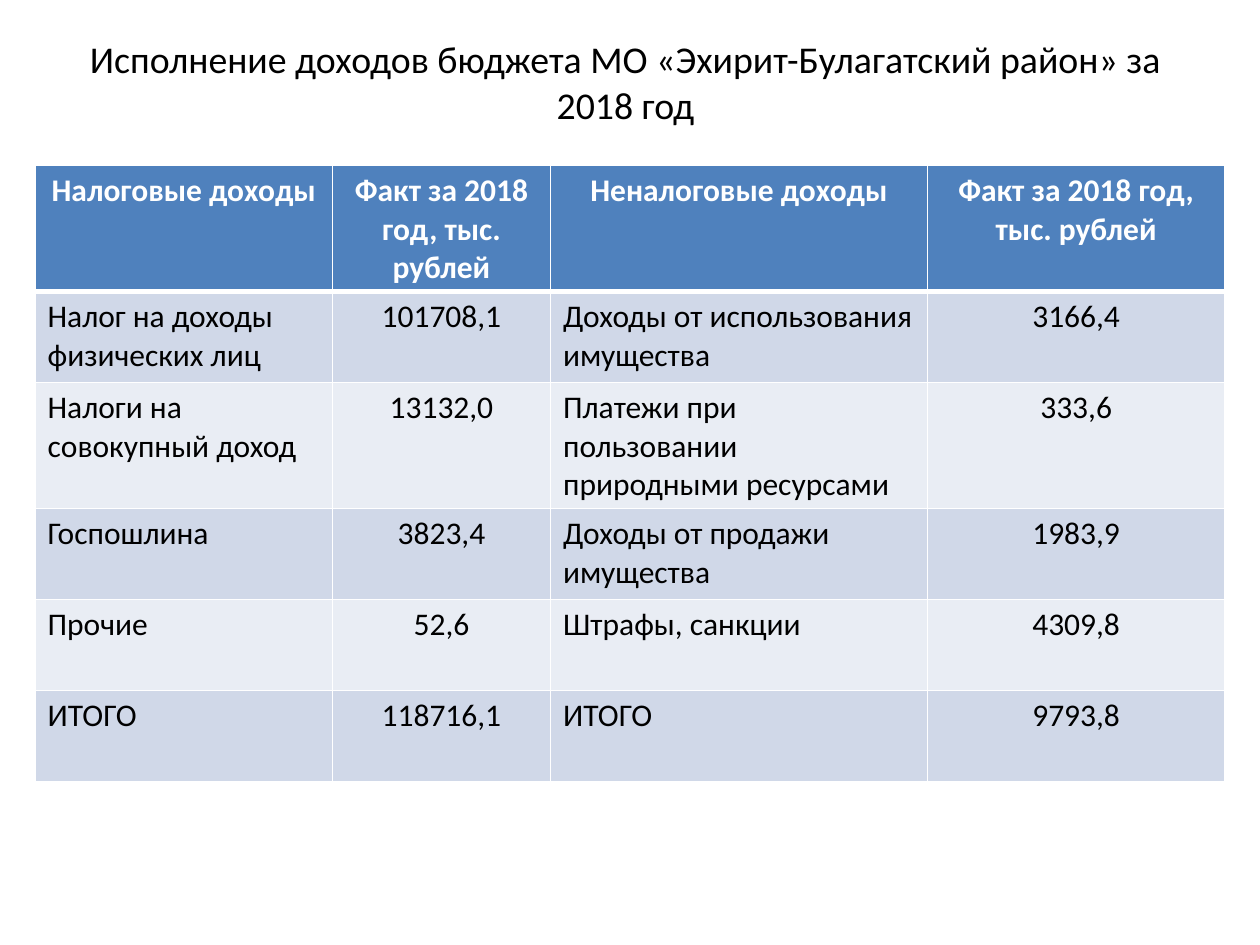
from dataclasses import dataclass

from lxml import etree
from pptx import Presentation
from pptx.dml.color import RGBColor
from pptx.enum.text import MSO_ANCHOR, PP_ALIGN
from pptx.oxml.ns import qn
from pptx.slide import Slide
from pptx.table import _Cell
from pptx.text.text import _Paragraph
from pptx.util import Pt

LEFT, CENTER = PP_ALIGN.LEFT, PP_ALIGN.CENTER
MIDDLE = MSO_ANCHOR.MIDDLE

BLACK = RGBColor(0x00, 0x00, 0x00)
WHITE = RGBColor(0xFF, 0xFF, 0xFF)
HEADER_BLUE = RGBColor(0x4F, 0x81, 0xBD)
BAND_DARK = RGBColor(0xD0, 0xD8, 0xE8)
BAND_LIGHT = RGBColor(0xE9, 0xED, 0xF4)

FONT = "Calibri"
THIN, THICK = Pt(1), Pt(3)
TITLE = "Исполнение доходов бюджета МО «Эхирит-Булагатский район» за 2018 год"


@dataclass(frozen=True)
class Column:
    heading: str
    width: float
    alignment: PP_ALIGN
    values: tuple[str, ...]


COLUMNS = (
    Column("Налоговые доходы", 170, LEFT,
           ("Налог на доходы физических лиц", "Налоги на совокупный доход",
            "Госпошлина", "Прочие", "ИТОГО")),
    Column("Факт за 2018 год, тыс. рублей", 124.6, CENTER,
           ("101708,1", "13132,0", "3823,4", "52,6", "118716,1")),
    Column("Неналоговые доходы", 215.4, LEFT,
           ("Доходы от использования имущества",
            "Платежи при пользовании природными ресурсами",
            "Доходы от продажи имущества", "Штрафы, санкции", "ИТОГО")),
    Column("Факт за 2018 год, тыс. рублей", 170, CENTER,
           ("3166,4", "333,6", "1983,9", "4309,8", "9793,8")),
)
HEADER_HEIGHT, ROW_HEIGHT = 53.3, 52


def write_text(paragraph: _Paragraph, text: str, alignment: PP_ALIGN,
               size: float, color: RGBColor, bold: bool = False) -> None:
    paragraph.alignment = alignment
    run = paragraph.add_run()
    run.text = text
    for name, value in {"name": FONT, "size": Pt(size), "bold": bold}.items():
        setattr(run.font, name, value)
    run.font.color.rgb = color


def set_borders(cell: _Cell, top: int, bottom: int) -> None:
    properties = cell._tc.get_or_add_tcPr()
    widths = {"a:lnL": THIN, "a:lnR": THIN, "a:lnT": top, "a:lnB": bottom}
    for tag, width in widths.items():
        line = etree.SubElement(properties, qn(tag), w=str(width))
        fill = etree.SubElement(line, qn("a:solidFill"))
        etree.SubElement(fill, qn("a:srgbClr"), val=str(WHITE))


def add_title(slide: Slide) -> None:
    box = slide.shapes.add_textbox(Pt(31), Pt(21.6), Pt(653), Pt(49.7))
    frame = box.text_frame
    for name, value in {"word_wrap": True, "vertical_anchor": MIDDLE}.items():
        setattr(frame, name, value)
    write_text(frame.paragraphs[0], TITLE, CENTER, 21.6, BLACK)


def add_income_table(slide: Slide) -> None:
    row_count = 1 + len(COLUMNS[0].values)
    width = sum(column.width for column in COLUMNS)
    height = HEADER_HEIGHT + ROW_HEIGHT * (row_count - 1)
    table = slide.shapes.add_table(row_count, len(COLUMNS), Pt(20), Pt(94.5),
                                   Pt(width), Pt(height)).table
    for index, row in enumerate(table.rows):
        row.height = Pt(ROW_HEIGHT if index else HEADER_HEIGHT)

    for column_index, column in enumerate(COLUMNS):
        table.columns[column_index].width = Pt(column.width)
        for row_index, text in enumerate((column.heading, *column.values)):
            cell = table.cell(row_index, column_index)
            is_header = row_index == 0
            set_borders(cell, THICK if row_index == 1 else THIN,
                        THICK if is_header else THIN)
            band = BAND_DARK if row_index % 2 else BAND_LIGHT
            cell.fill.solid()
            cell.fill.fore_color.rgb = HEADER_BLUE if is_header else band
            write_text(cell.text_frame.paragraphs[0], text,
                       CENTER if is_header else column.alignment, 18,
                       WHITE if is_header else BLACK, is_header)


def main() -> None:
    presentation = Presentation()
    presentation.slide_width, presentation.slide_height = Pt(720), Pt(540)
    slide = presentation.slides.add_slide(presentation.slide_layouts[6])
    # Heading
    add_title(slide)
    # Tax and non-tax income
    add_income_table(slide)
    presentation.save("out.pptx")


if __name__ == "__main__":
    main()
